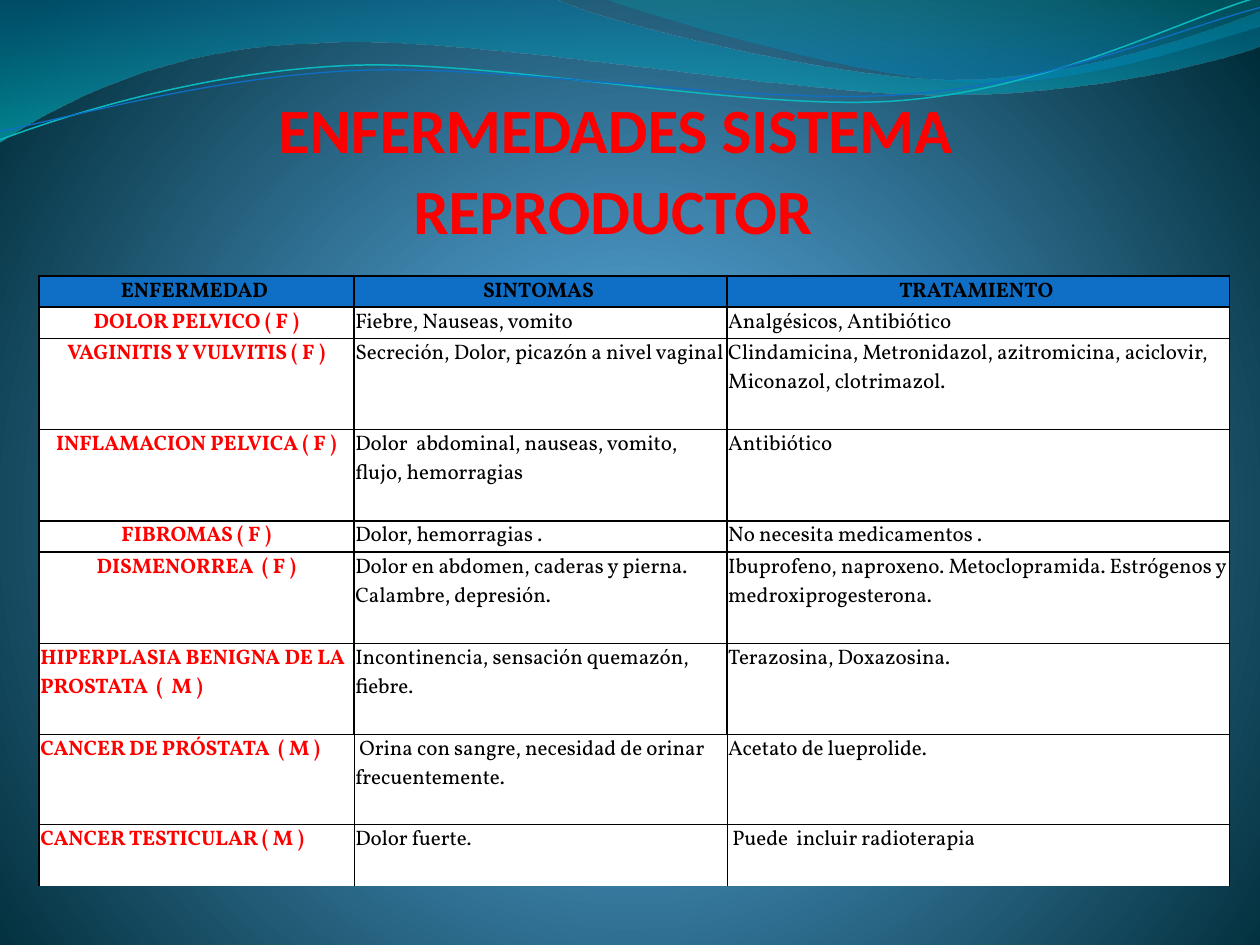
"""Build a slide with a table of diseases of the reproductive system."""
from dataclasses import dataclass

from pptx import Presentation
from pptx.dml.color import RGBColor
from pptx.enum.text import MSO_ANCHOR, MSO_AUTO_SIZE, PP_ALIGN
from pptx.oxml import parse_xml
from pptx.oxml.ns import nsdecls, qn
from pptx.util import Inches, Pt


@dataclass(frozen=True)
class Theme:
    """Colours, fonts and type sizes of the slide."""
    accent: str = "FF0000"
    ink: str = "000000"
    header: str = "0F6FC6"
    paper: str = "FFFFFF"
    teal_line: str = "0AB8BF"
    blue_line: str = "0F6FC6"
    title_font: str = "Calibri"
    table_font: str = "Vollkorn"
    title_size: float = 36
    lead_size: float = 50.4
    table_size: float = 12
    backdrop: tuple = ((0, "4AA0D6", 100), (25, "4C98C7", 100), (100, "002C38", 100))
    wide_wave: tuple = ((0, "0074A1", 45), (100, "00C6CF", 55))
    corner_wave: tuple = ((0, "00A1A9", 30), (80, "008BBF", 45))


THEME = Theme()
DOWNWARD = '<a:lin ang="5400000" scaled="1"/>'
RADIAL = ('<a:path path="circle"><a:fillToRect l="10000" t="110000" r="10000" b="100000"/>'
          '</a:path>')

WIDE_WAVE = [(0, 0), (4.4, -0.01), (4.76, 0.17, 6.64, 0.63, 7.58, 0.63),
             (8.53, 0.63, 9.58, 0.26, 10, 0.09), (10.01, 0.36),
             (9.83, 0.44, 8.7, 0.76, 7.46, 0.75), (6.22, 0.75, 3.82, 0.28, 2.57, 0.34),
             (1.29, 0.36, 0.46, 0.83, -0.01, 1.13), (0, 0)]
CORNER_WAVE = [(4.79, -0.01), (5.09, 0.11, 6.82, 0.62, 7.69, 0.65),
               (8.56, 0.69, 9.61, 0.32, 10, 0.21), (10, 0), (4.79, -0.01)]
TEAL_CURVE = [(0, 1.11), (0.48, 0.93, 1.58, 0.57, 2.77, 0.52),
              (3.95, 0.47, 5.93, 0.89, 7.13, 0.8), (8.33, 0.71, 9.38, 0.15, 9.98, -0.02)]
BLUE_CURVE = [(0, 1.04), (0.47, 0.96, 1.64, 0.61, 2.83, 0.56),
              (4.03, 0.51, 5.97, 0.84, 7.17, 0.75), (8.36, 0.67, 9.41, 0.21, 10, 0.06)]

TABLE_HEIGHT = 4.84
COLUMN_WIDTHS = [2.5, 2.96, 3.99]
ROW_HEIGHTS = [0.25, 0.25, 0.73, 0.73, 0.25, 0.73, 0.73, 0.72, 0.49]
CENTRED_ROWS = 6
THIN_ROWS_START = 7
ROWS = [
    ("ENFERMEDAD ", "SINTOMAS ", "TRATAMIENTO "),
    ("DOLOR PELVICO ( F )", "Fiebre, Nauseas, vomito", "Analgésicos, Antibiótico"),
    ("VAGINITIS Y VULVITIS ( F )", "Secreción, Dolor, picazón a nivel vaginal",
     "Clindamicina, Metronidazol, azitromicina, aciclovir, Miconazol, clotrimazol."),
    ("INFLAMACION PELVICA ( F )", "Dolor  abdominal, nauseas, vomito, flujo, hemorragias",
     "Antibiótico"),
    ("FIBROMAS ( F )", "Dolor, hemorragias .", "No necesita medicamentos ."),
    ("DISMENORREA  ( F )", "Dolor en abdomen, caderas y pierna. Calambre, depresión.",
     "Ibuprofeno, naproxeno. Metoclopramida. Estrógenos y medroxiprogesterona."),
    ("HIPERPLASIA BENIGNA DE LA PROSTATA  (  M )",
     "Incontinencia, sensación quemazón, fiebre.", "Terazosina, Doxazosina."),
    ("CANCER DE PRÓSTATA  ( M )", " Orina con sangre, necesidad de orinar  frecuentemente.",
     "Acetato de lueprolide."),
    ("CANCER TESTICULAR ( M )", "Dolor fuerte.", " Puede  incluir radioterapia"),
]


def apply_gradient(fill, holder, stops, direction):
    """Fill an element with gradient stops of position, colour and opacity."""
    fill.solid()
    marks = "".join(
        f'<a:gs pos="{position * 1000}"><a:srgbClr val="{colour}">'
        f'<a:alpha val="{opacity * 1000}"/></a:srgbClr></a:gs>'
        for position, colour, opacity in stops)
    gradient = parse_xml(f'<a:gradFill {nsdecls("a")} rotWithShape="1">'
                         f'<a:gsLst>{marks}</a:gsLst>{direction}</a:gradFill>')
    holder.replace(holder.find(qn("a:solidFill")), gradient)


def bend_segments(shape, outline):
    """Turn the segments that have control points into cubic curves."""
    lines = list(shape._element.iter(qn("a:lnTo")))
    for line, segment in zip(lines, outline[1:]):
        if len(segment) == 2:
            continue
        points = "".join(
            f'<a:pt x="{Inches(x) - shape.left}" y="{Inches(y) - shape.top}"/>'
            for x, y in zip(segment[::2], segment[1::2]))
        curve = parse_xml(f'<a:cubicBezTo {nsdecls("a")}>{points}</a:cubicBezTo>')
        line.getparent().replace(line, curve)


def draw_outline(page, outline, close):
    """Add a freeform that follows the outline."""
    anchors = [(Inches(segment[-2]), Inches(segment[-1])) for segment in outline]
    builder = page.shapes.build_freeform(*anchors[0])
    builder.add_line_segments(anchors[1:], close=close)
    shape = builder.convert_to_shape()
    shape.shadow.inherit = False
    bend_segments(shape, outline)
    return shape


def add_wave(page, outline, stops):
    """Add a translucent wave without a line."""
    wave = draw_outline(page, outline, True)
    wave.line.fill.background()
    apply_gradient(wave.fill, wave._element.spPr, stops, DOWNWARD)


def add_curve(page, outline, colour, width):
    """Add an open curved line."""
    curve = draw_outline(page, outline, False)
    curve.fill.background()
    curve.line.color.rgb = RGBColor.from_string(colour)
    curve.line.width = Pt(width)


def format_span(span, font, size, colour, bold):
    """Set the type of one run."""
    span.font.name = font
    span.font.size = Pt(size)
    span.font.color.rgb = RGBColor.from_string(colour)
    span.font.bold = bold


def place_title(page):
    """Move, fill and format the title placeholder in front of the waves."""
    title = page.shapes.title
    title.left, title.top, title.width, title.height = map(Inches, (0.58, 0.55, 8.59, 1.41))
    title._element.getparent().append(title._element)
    frame = title.text_frame
    frame.auto_size = MSO_AUTO_SIZE.NONE
    frame.word_wrap = True
    frame.vertical_anchor = MSO_ANCHOR.BOTTOM
    frame.margin_left = frame.margin_top = frame.margin_bottom = 0
    frame.margin_right = Inches(0.02)
    para = frame.paragraphs[0]
    para.alignment = PP_ALIGN.CENTER
    para.line_spacing = 1.0
    for text, size in ((" ", THEME.lead_size),
                       ("ENFERMEDADES SISTEMA  REPRODUCTOR", THEME.title_size)):
        span = para.add_run()
        span.text = text
        format_span(span, THEME.title_font, size, THEME.accent, True)


def border_widths(row, column):
    """Give the left, right, top and bottom border widths of a cell."""
    if row < THIN_ROWS_START:
        return 1, 1, 1, 1
    return (1 if column == 0 else 0.5,
            1 if column == len(COLUMN_WIDTHS) - 1 else 0.5,
            1 if row == THIN_ROWS_START else 0.5,
            0 if row == len(ROWS) - 1 else 0.5)


def set_borders(cell, widths):
    """Draw the four borders of a cell, leaving out those of zero width."""
    properties = cell._tc.get_or_add_tcPr()
    for index, (side, width) in enumerate(zip("LRTB", widths)):
        paint = (f'<a:solidFill><a:srgbClr val="{THEME.ink}"/></a:solidFill>'
                 if width else "<a:noFill/>")
        properties.insert(index, parse_xml(
            f'<a:ln{side} {nsdecls("a")} w="{Pt(width)}">{paint}</a:ln{side}>'))


def fill_cell(cell, text, row, column):
    """Write and format one table cell."""
    header, name = row == 0, column == 0
    cell.margin_left = cell.margin_right = cell.margin_top = Inches(0.01)
    cell.margin_bottom = 0
    cell.fill.solid()
    cell.fill.fore_color.rgb = RGBColor.from_string(THEME.header if header else THEME.paper)
    para = cell.text_frame.paragraphs[0]
    para.text = text
    centred = header or (name and row < CENTRED_ROWS)
    para.alignment = PP_ALIGN.CENTER if centred else PP_ALIGN.LEFT
    colour = THEME.accent if name and not header else THEME.ink
    format_span(para.runs[0], THEME.table_font, THEME.table_size, colour, header or name)
    set_borders(cell, border_widths(row, column))


def add_disease_table(page):
    """Add the table of diseases, symptoms and treatments."""
    table = page.shapes.add_table(
        len(ROWS), len(COLUMN_WIDTHS), Inches(0.31), Inches(2.19),
        Inches(sum(COLUMN_WIDTHS)), Inches(TABLE_HEIGHT)).table
    table.horz_banding = False
    for column, width in zip(table.columns, COLUMN_WIDTHS):
        column.width = Inches(width)
    for row, (texts, height) in enumerate(zip(ROWS, ROW_HEIGHTS)):
        table.rows[row].height = Inches(height * TABLE_HEIGHT / sum(ROW_HEIGHTS))
        for column, text in enumerate(texts):
            fill_cell(table.cell(row, column), text, row, column)


def main():
    """Build and save the deck."""
    deck = Presentation()
    deck.slide_width, deck.slide_height = Inches(10), Inches(7.5)
    page = deck.slides.add_slide(deck.slide_layouts[0])
    subtitle = page.placeholders[1]._element
    subtitle.getparent().remove(subtitle)
    backdrop = page.background.fill
    apply_gradient(backdrop, page._element.find(".//" + qn("p:bgPr")), THEME.backdrop, RADIAL)
    add_wave(page, WIDE_WAVE, THEME.wide_wave)
    add_wave(page, CORNER_WAVE, THEME.corner_wave)
    add_curve(page, TEAL_CURVE, THEME.teal_line, 0.85)
    add_curve(page, BLUE_CURVE, THEME.blue_line, 0.75)
    place_title(page)
    add_disease_table(page)
    deck.save("out.pptx")


if __name__ == "__main__":
    main()
